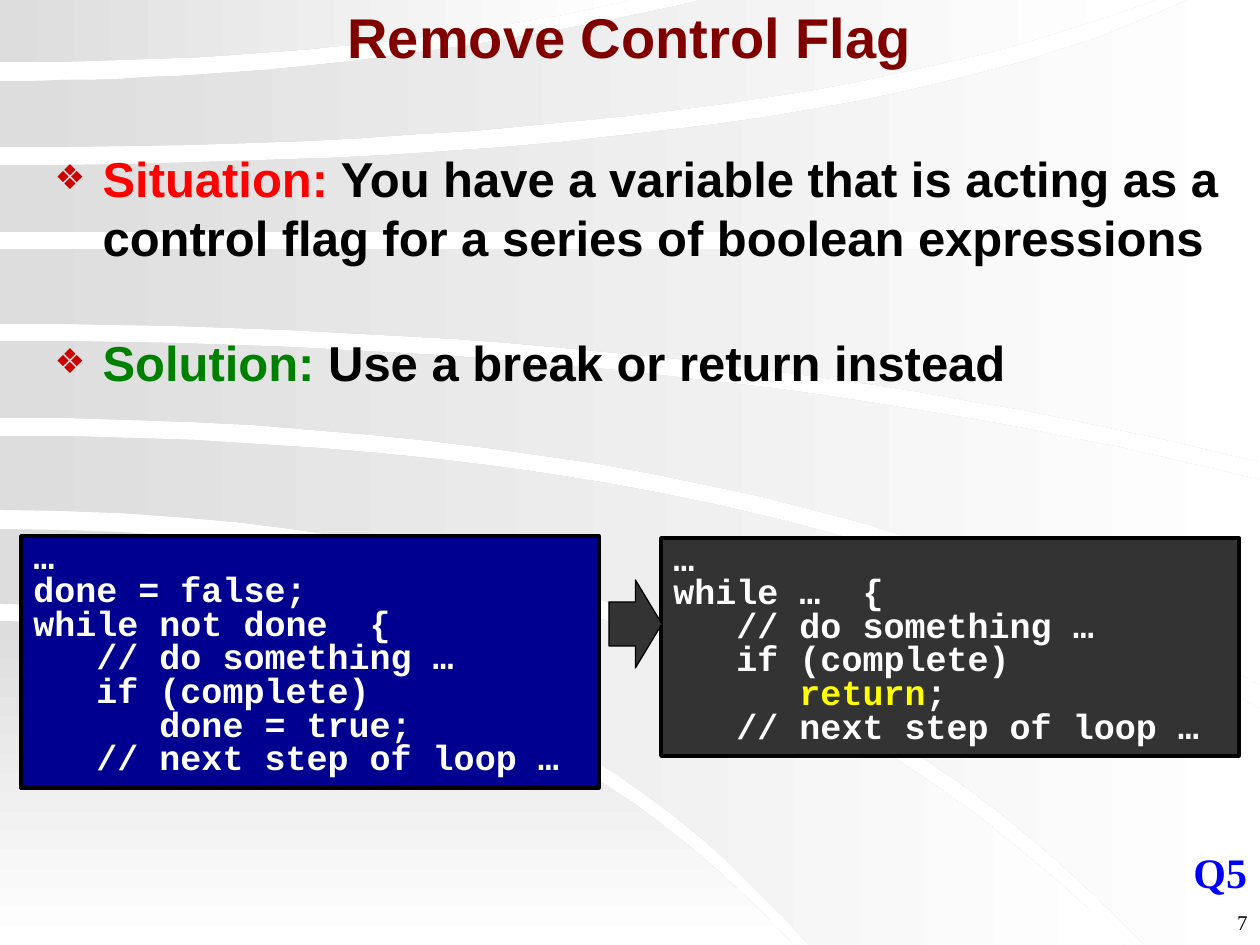
from lxml import etree
from pptx import Presentation, util as u
from pptx.dml.color import RGBColor
from pptx.enum import shapes, text
from pptx.oxml.ns import qn

PX = u.Inches(1) // 126
W, H = 1260, 945
STEPS = 24
SANS, SERIF, MONO = "Arial", "Times New Roman", "Courier New"
COLORS = {
    "band": "DDDDDD", "white": "FFFFFF", "black": "000000", "title": "800000",
    "bullet": "CC0000", "situation": "FF0000", "solution": "008000",
    "before": "000090", "after": "333333", "keyword": "FFFF00", "quiz": "0000FF",
}

# Content: runs are (text, colour)
TITLE = "Remove Control Flag"
POINTS = [
    [("Situation:", "situation"),
     (" You have a variable that is acting as a control flag "
      "for a series of boolean expressions", "black")],
    [("Solution: ", "solution"), ("Use a break or return instead", "black")],
]
BEFORE = ["…", "done = false;", "while not done  {", "   // do something …",
          "   if (complete)", "      done = true;", "   // next step of loop …"]
AFTER = ["…", "while …  {", "   // do something …", "   if (complete)",
         [("      return", "keyword"), (";", "white")], "   // next step of loop …"]
CODE_BOXES = [(BEFORE, "before", (21, 536, 578, 252)),
              (AFTER, "after", (661, 538, 578, 218))]

# Background bands: upper edge, slide corners passed, lower edge.
# An edge leaves the left side level at y, bends at x, and ends at (x, y).
BANDS = [
    ((621, 498, 793, H), [], (H, 498, 793, H)),
    ((529, 718, 1125, H), [], (604, 514, 809, H)),
    ((436, 796, W, 709), [(W, H)], (510, 734, 1145, H)),
    ((341, 704, W, 480), [], (418, 784, W, 685)),
    ((249, 710, W, 249), [], (324, 710, W, 462)),
    ((165, 842, 1188, 0), [(W, 0)], (232, 842, W, 232)),
    ((81, 358, 701, 0), [], (147, 772, 1155, 0)),
    ((0, 360, 631, 0), [], (62, 360, 631, 0)),
]


def rgb(name):
    return RGBColor.from_string(COLORS[name])


def emu(box):
    return [v * PX for v in box]


def curve(y0, bend, x1, y1):
    """Points on a quadratic curve that starts level at the left side."""
    ts = [i / STEPS for i in range(STEPS + 1)]
    return [(2 * t * (1 - t) * bend + t * t * x1, y0 + t * t * (y1 - y0)) for t in ts]


def place(sp, box):
    sp.left, sp.top, sp.width, sp.height = emu(box)


def add_runs(p, runs, font, size, bold=True):
    for content, color in runs:
        r = p.add_run()
        r.text = content
        r.font.name, r.font.size, r.font.bold = font, u.Pt(size), bold
        r.font.color.rgb = rgb(color)


def paragraphs(tf, count):
    return [tf.paragraphs[0]] + [tf.add_paragraph() for _ in range(count - 1)]


def add_bullet(p, indent):
    pPr = p._p.get_or_add_pPr()
    pPr.set("marL", str(indent * PX))
    pPr.set("indent", str(-indent * PX))
    clr = etree.SubElement(pPr, qn("a:buClr"))
    etree.SubElement(clr, qn("a:srgbClr"), val=COLORS["bullet"])
    etree.SubElement(pPr, qn("a:buSzPct"), val="70000")
    etree.SubElement(pPr, qn("a:buChar"), char="❖")


def add_shape(s, kind, box, fill, line_width):
    sp = s.shapes.add_shape(kind, *emu(box))
    sp.shadow.inherit = False
    sp.fill.solid()
    sp.fill.fore_color.rgb = rgb(fill)
    sp.line.color.rgb = rgb("black")
    sp.line.width = u.Pt(line_width)
    return sp


def add_label(s, content, box, size, color, align, bold, wrap):
    tf = s.shapes.add_textbox(*emu(box)).text_frame
    tf.word_wrap = wrap
    p = tf.paragraphs[0]
    p.alignment = align
    add_runs(p, [(content, color)], SERIF, size, bold)


prs = Presentation()
prs.slide_width, prs.slide_height = W * PX, H * PX
s = prs.slides.add_slide(prs.slide_layouts[1])
title, body = s.shapes.title, s.placeholders[1]

# Background bands, behind the placeholders; the first one fades downwards
for i, (upper, corners, lower) in enumerate(BANDS):
    outline = curve(*upper) + corners + curve(*lower)[::-1]
    builder = s.shapes.build_freeform(*outline[0], scale=PX)
    builder.add_line_segments(outline[1:], close=True)
    band = builder.convert_to_shape()
    band.shadow.inherit = False
    band.line.fill.background()
    band.fill.gradient()
    band.fill.gradient_angle = 0 if i else 270
    for stop, color in zip(band.fill.gradient_stops, ("band", "white")):
        stop.color.rgb = rgb(color)
    title._element.addprevious(band._element)

# Title
place(title, (10, 0, 1239, 73))
tf = title.text_frame
tf.auto_size = text.MSO_AUTO_SIZE.NONE
tf.vertical_anchor = text.MSO_ANCHOR.MIDDLE
tf.paragraphs[0].alignment = text.PP_ALIGN.CENTER
add_runs(tf.paragraphs[0], [(TITLE, "title")], SANS, 32)

# Situation and solution
place(body, (42, 142, 1207, 380))
tf = body.text_frame
tf.auto_size = text.MSO_AUTO_SIZE.NONE
for i, (p, runs) in enumerate(zip(paragraphs(tf, len(POINTS)), POINTS)):
    add_bullet(p, 48)
    p.space_before = u.Pt(38 if i else 0)
    add_runs(p, runs, SANS, 28)

# Code before and after
for lines, fill, box in CODE_BOXES:
    tf = add_shape(s, shapes.MSO_SHAPE.RECTANGLE, box, fill, 2).text_frame
    tf.word_wrap = True
    tf.vertical_anchor = text.MSO_ANCHOR.TOP
    for p, line in zip(paragraphs(tf, len(lines)), lines):
        p.alignment = text.PP_ALIGN.LEFT
        p.line_spacing = 0.8
        add_runs(p, [(line, "white")] if isinstance(line, str) else line, MONO, 20)

add_shape(s, shapes.MSO_SHAPE.RIGHT_ARROW, (609, 580, 53, 88), "after", 0.75)

# Quiz mark and page number
add_label(s, "Q5", (1181, 840, 79, 63), 24, "quiz", text.PP_ALIGN.LEFT, True, False)
add_label(s, "7", (998, 903, 262, 42), 12, "black", text.PP_ALIGN.RIGHT, False, True)

prs.save("out.pptx")
